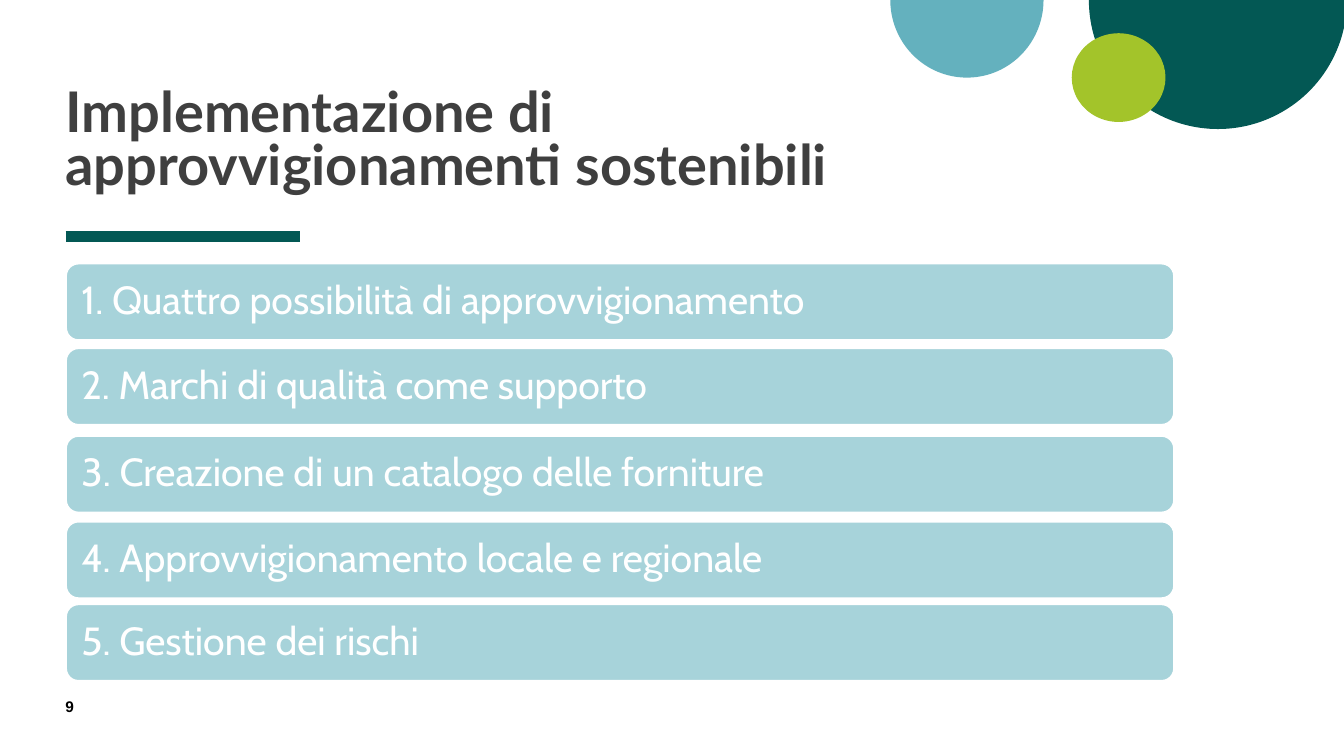
from pptx import Presentation
from pptx import util as u
from pptx.dml.color import RGBColor
from pptx.enum import shapes, text

PX = 9144  # EMU in one px, 100 px to the inch
GREEN, TEAL, LIME = "035854", "64B1BE", "A3C42A"
PALE, WHITE, GREY, BLACK = "A7D3DA", "FFFFFF", "3F3F3F", "000000"
HALF_TURN = 108  # 180 degrees in units of the pie's adjustment

# Top of each bar and its topic
TOPICS = [
    (261, "1. Quattro possibilità di approvvigionamento"),
    (345, "2. Marchi di qualità come supporto"),
    (432, "3. Creazione di un catalogo delle forniture"),
    (517, "4. Approvvigionamento locale e regionale"),
    (599, "5. Gestione dei rischi"),
]


def px(*lengths):
    return [u.Emu(length * PX) for length in lengths]


def colour(code):
    return RGBColor.from_string(code)


def add_filled(page, kind, box, fill):
    shape = page.shapes.add_shape(kind, *px(*box))
    shape.shadow.inherit = False
    shape.fill.solid()
    shape.fill.fore_color.rgb = colour(fill)
    shape.line.fill.background()
    return shape


def write(frame, words, font, size, code, bold=False, spacing=1.0,
          anchor=text.MSO_ANCHOR.TOP, inset=0):
    """Fill a text frame with one left-aligned run."""
    frame.word_wrap = True
    frame.auto_size = text.MSO_AUTO_SIZE.NONE
    frame.vertical_anchor = anchor
    frame.margin_left, frame.margin_right = px(inset, inset)
    frame.margin_top = frame.margin_bottom = 0
    para = frame.paragraphs[0]
    para.alignment = text.PP_ALIGN.LEFT
    para.line_spacing = spacing
    para.space_before = u.Pt(0)
    span = para.add_run()
    span.text = words
    span.font.name = font
    span.font.size = u.Pt(size)
    span.font.bold = bold
    span.font.color.rgb = colour(code)


def add_circles(page, left):
    """Hang two half discs from the top edge, with a small disc in front."""
    kinds = shapes.MSO_SHAPE
    for offset, top, width, height, fill in [(197, -128, 256, 256, GREEN),
                                             (0, -77, 152, 154, TEAL)]:
        half = add_filled(page, kinds.PIE, (left + offset, top, width, height), fill)
        half.adjustments[0] = 0
        half.adjustments[1] = HALF_TURN
    add_filled(page, kinds.OVAL, (left + 180, 33, 93, 88), LIME)


def add_title(page, left, top, width, height):
    """Place the title and the rule beneath it."""
    title = page.shapes.title
    title.left, title.top, title.width, title.height = px(left, top, width, height)
    write(title.text_frame, "Implementazione di approvvigionamenti sostenibili",
          "Lato", 40, GREY, bold=True, spacing=0.8, anchor=text.MSO_ANCHOR.BOTTOM)
    rule_top = top + height + 40
    rule = page.shapes.add_connector(shapes.MSO_CONNECTOR.STRAIGHT,
                                     *px(left, rule_top, left + 233, rule_top))
    rule.line.color.rgb = colour(GREEN)
    rule.line.width = u.Pt(8)
    properties = rule._element.spPr
    properties.append(properties.makeelement(
        "{http://schemas.openxmlformats.org/drawingml/2006/main}effectLst", {}))


def add_topics(page, left, width, height):
    for top, topic in TOPICS:
        bar = add_filled(page, shapes.MSO_SHAPE.ROUNDED_RECTANGLE,
                         (left, top, width, height), PALE)
        bar.line.color.rgb = colour(WHITE)
        bar.line.width = u.Pt(2)
        write(bar.text_frame, topic, "Cabin", 28, WHITE, spacing=0.9,
              anchor=text.MSO_ANCHOR.MIDDLE, inset=12)


def add_page_number(page, *box):
    number = page.shapes.add_textbox(*px(*box))
    write(number.text_frame, "9", "Arial", 11, BLACK, bold=True)


def main():
    deck = Presentation()
    deck.slide_width, deck.slide_height = px(1333, 750)
    page = deck.slides.add_slide(deck.slide_layouts[5])
    page.background.fill.solid()
    page.background.fill.fore_color.rgb = colour(WHITE)
    add_circles(page, 883)
    add_title(page, 65, 21, 839, 174)
    add_topics(page, 65, 1100, 77)
    add_page_number(page, 65, 692, 57, 27)
    deck.save("out.pptx")


if __name__ == "__main__":
    main()
